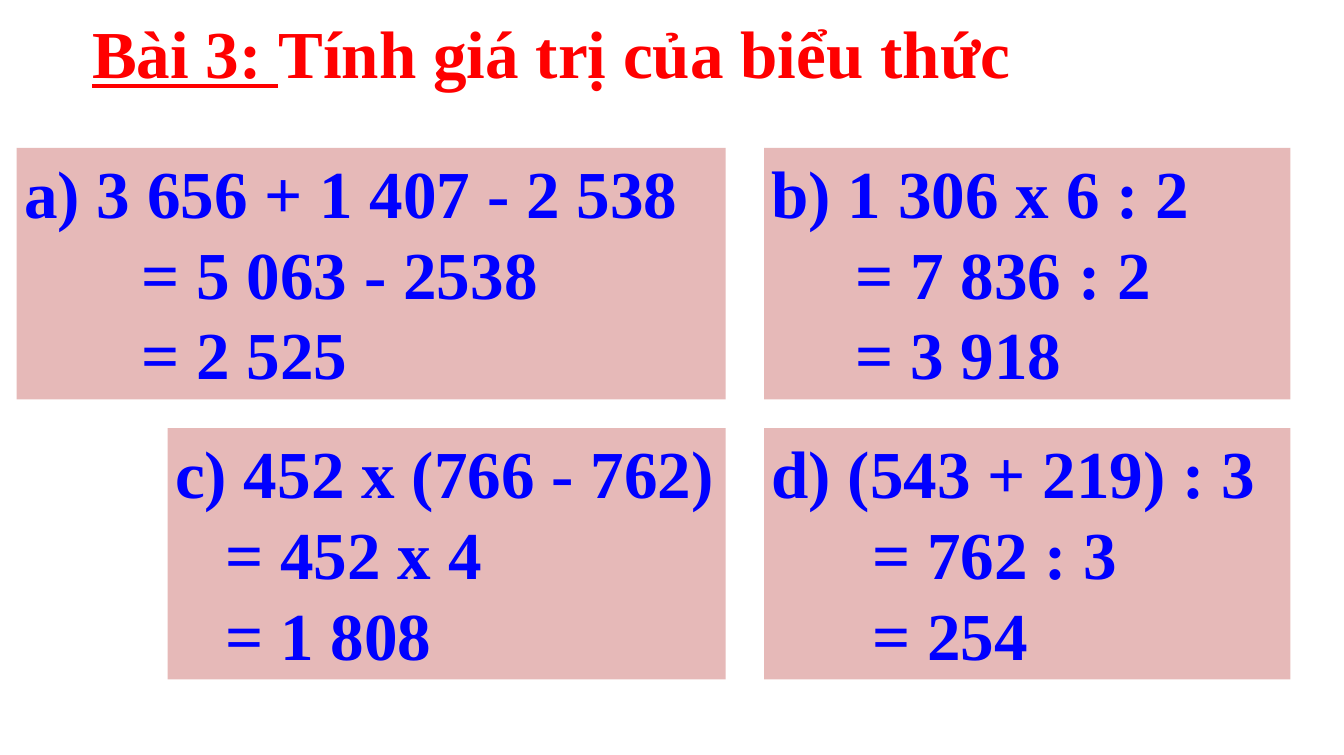
from pptx import Presentation, util as u
from pptx.dml.color import RGBColor
from pptx.enum import shapes, text

COLORS = {"title": "FF0000", "work": "0000FF", "panel": "E6B9B8"}
FONT, SIZE = "Times New Roman", 64
SPACE = SIZE / 4 / 72
TITLE = [("Bài 3: ", True), ("Tính giá trị của biểu thức", False)]
EXERCISES = [
    [(0.22, 7, ["a) 3 656 + 1 407 - 2 538", "= 5 063 - 2538", "= 2 525"]),
     (10.12, 5, ["b) 1 306 x 6 : 2", "= 7 836 : 2", "= 3 918"])],
    [(2.22, 3, ["c) 452 x (766 - 762)", "= 452 x 4", "= 1 808"]),
     (10.12, 6, ["d) (543 + 219) : 3", "= 762 : 3", "= 254"])],
]
RIGHT_EDGES = (9.61, 17.09)
TOP, HEIGHT, ROW_STEP = 1.96, 3.33, 3.71


def add_run(p, words, color, underline=False):
    r = p.add_run()
    r.text = words
    r.font.name = FONT
    r.font.size = u.Pt(SIZE)
    r.font.bold = True
    r.font.underline = underline
    r.font.color.rgb = RGBColor.from_string(COLORS[color])


def set_frame(tf):
    tf.word_wrap = True
    tf.auto_size = text.MSO_AUTO_SIZE.SHAPE_TO_FIT_TEXT
    tf.vertical_anchor = text.MSO_ANCHOR.TOP


def add_exercise(s, left, top, width, indent, lines):
    sp = s.shapes.add_shape(shapes.MSO_SHAPE.RECTANGLE, u.Inches(left),
                            u.Inches(top), u.Inches(width), u.Inches(HEIGHT))
    sp.shadow.inherit = False
    sp.fill.solid()
    sp.fill.fore_color.rgb = RGBColor.from_string(COLORS["panel"])
    sp.line.fill.background()
    tf = sp.text_frame
    set_frame(tf)
    for i, line in enumerate(lines):
        p = tf.paragraphs[0] if i == 0 else tf.add_paragraph()
        p.alignment = text.PP_ALIGN.LEFT
        if i:
            pPr = p._p.get_or_add_pPr()
            pPr.set("marL", str(u.Inches(indent * SPACE)))
            pPr.set("indent", "0")
        add_run(p, line, "work")


def main():
    prs = Presentation()
    prs.slide_width, prs.slide_height = u.Inches(17.8), u.Inches(10)
    s = prs.slides.add_slide(prs.slide_layouts[6])

    title = s.shapes.add_textbox(u.Inches(0.9), u.Inches(0.1),
                                 u.Inches(15.2), u.Inches(1.18))
    tf = title.text_frame
    set_frame(tf)
    tf.margin_left = u.Inches(0.1 + SPACE)
    for words, underline in TITLE:
        add_run(tf.paragraphs[0], words, "title", underline)

    for row, exercises in enumerate(EXERCISES):
        for (left, indent, lines), right in zip(exercises, RIGHT_EDGES):
            add_exercise(s, left, TOP + row * ROW_STEP, right - left, indent, lines)

    prs.save("out.pptx")


if __name__ == "__main__":
    main()
